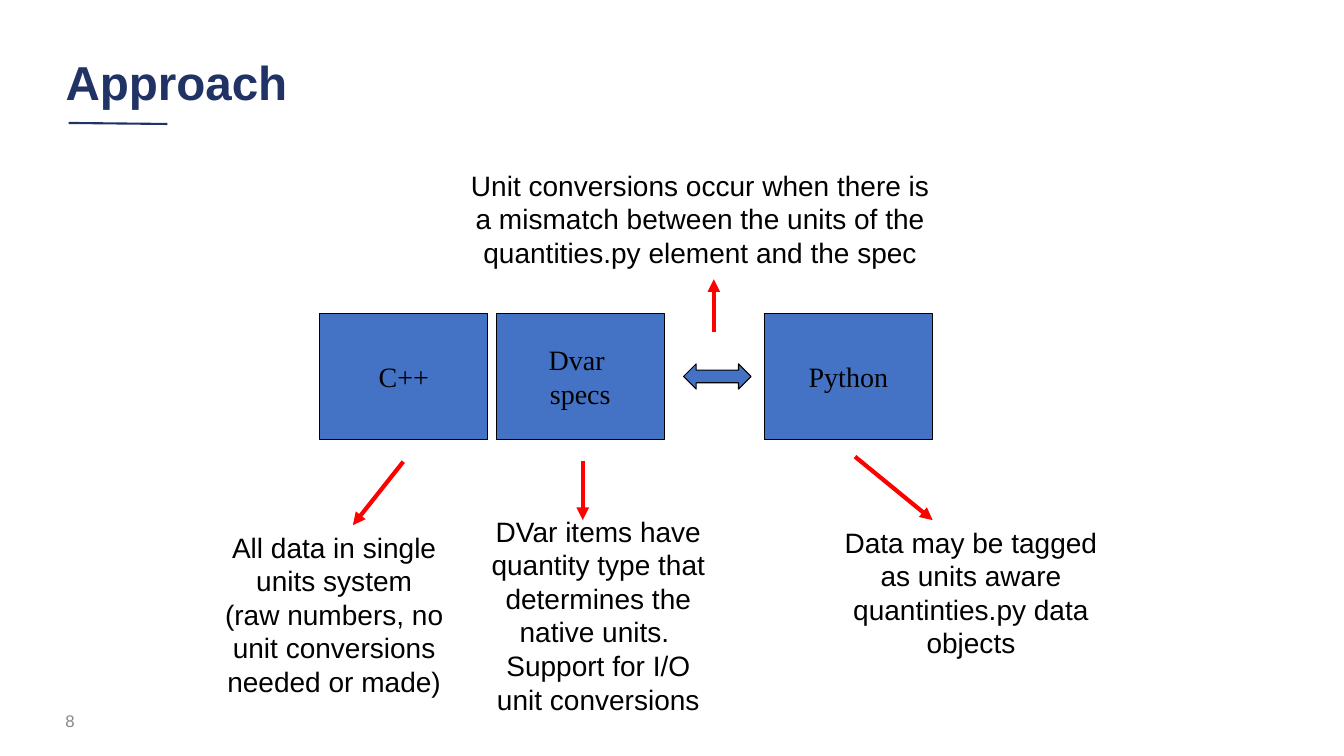
from lxml import etree
from pptx import Presentation
from pptx.dml.color import RGBColor
from pptx.enum.shapes import MSO_CONNECTOR, MSO_SHAPE
from pptx.enum.text import MSO_ANCHOR, PP_ALIGN
from pptx.oxml.ns import qn
from pptx.util import Inches, Pt

NAVY = RGBColor(0x21, 0x32, 0x65)
BLUE = RGBColor(0x44, 0x72, 0xC4)
RED = RGBColor(0xFF, 0, 0)
BLACK = RGBColor(0, 0, 0)
GREY = RGBColor(0x88, 0x88, 0x88)
STRAIGHT = MSO_CONNECTOR.STRAIGHT
RECT, DOUBLE_ARROW = MSO_SHAPE.RECTANGLE, MSO_SHAPE.LEFT_RIGHT_ARROW
MIDDLE, TOP = MSO_ANCHOR.MIDDLE, MSO_ANCHOR.TOP
CENTER, LEFT = PP_ALIGN.CENTER, PP_ALIGN.LEFT

BOX_TOP, BOX_W, BOX_H = 3.11, 1.67, 1.25
BOXES = [(3.17, ["C++"]), (4.92, ["Dvar ", "specs"]), (7.58, ["Python"])]
EXCHANGE = (6.78, 3.61, 0.67, 0.25)
NOTES = [  # left, top, width, height, paragraphs
    (2.08, 5.21, 2.47, 1.78, ["All data in single units system",
                              "(raw numbers, no unit conversions needed or made)"]),
    (8.17, 5.16, 2.92, 1.45, ["Data may be tagged as units aware quantinties.py data objects"]),
    (4.7, 5.05, 2.47, 2.12, ["DVar items have quantity type that determines the native units.  "
                             "Support for I/O unit conversions"]),
    (4.49, 1.62, 4.91, 1.11, ["Unit conversions occur when there is a mismatch between the "
                              "units of the quantities.py element and the spec"]),
]
ARROWS = [(4, 4.58, 3.5, 5.21), (5.78, 4.57, 5.78, 5.16),
          (8.48, 4.53, 9.25, 5.16), (7.08, 3.29, 7.08, 2.77)]
BODY = {"name": "Arial", "size": Pt(20)}
BOX_FONT = {"name": "Times New Roman", "size": Pt(20)}


def write(tf, lines, font, color=BLACK, align=CENTER, anchor=TOP, wrap=True):
    tf.word_wrap = wrap
    tf.vertical_anchor = anchor
    for i, line in enumerate(lines):
        p = tf.paragraphs[0] if i == 0 else tf.add_paragraph()
        p.alignment = align
        r = p.add_run()
        r.text = line
        for name, value in font.items():
            setattr(r.font, name, value)
        r.font.color.rgb = color


def add_text(slide, place, lines, font, **layout):
    box = slide.shapes.add_textbox(*map(Inches, place))
    write(box.text_frame, lines, font, **layout)


def add_block(slide, kind, place):
    """Add a blue shape with a thin black outline."""
    sp = slide.shapes.add_shape(kind, *map(Inches, place))
    sp.shadow.inherit = False
    sp.fill.solid()
    sp.fill.fore_color.rgb = BLUE
    sp.line.color.rgb = BLACK
    sp.line.width = Pt(0.75)
    return sp


def add_line(slide, ends, color, width, arrow=False):
    c = slide.shapes.add_connector(STRAIGHT, *map(Inches, ends))
    c.line.color.rgb = color
    c.line.width = Pt(width)
    if arrow:
        etree.SubElement(c.line._get_or_add_ln(), qn("a:tailEnd"), type="triangle")
    etree.SubElement(c._element.spPr, qn("a:effectLst"))


def main():
    prs = Presentation()
    prs.slide_width, prs.slide_height = Inches(13.33), Inches(7.5)
    slide = prs.slides.add_slide(prs.slide_layouts[5])

    title = slide.shapes.title
    title.left, title.top, title.width, title.height = map(Inches, (0.55, 0.46, 11.12, 0.76))
    write(title.text_frame, ["Approach"], {"name": "Arial", "size": Pt(34), "bold": True},
          color=NAVY, align=LEFT, anchor=MIDDLE)
    title.text_frame.paragraphs[0].line_spacing = 0.9
    add_line(slide, (0.68, 1.22, 1.66, 1.23), NAVY, 1.5)
    add_text(slide, (0.55, 6.95, 3, 0.4), ["8"], {"name": "Arial", "size": Pt(12)},
             color=GREY, align=LEFT, anchor=MIDDLE)

    for left, lines in BOXES:
        sp = add_block(slide, RECT, (left, BOX_TOP, BOX_W, BOX_H))
        write(sp.text_frame, lines, BOX_FONT, anchor=MIDDLE, wrap=False)
    add_block(slide, DOUBLE_ARROW, EXCHANGE)

    for *place, lines in NOTES:
        add_text(slide, place, lines, BODY)
    for ends in ARROWS:
        add_line(slide, ends, RED, 3, arrow=True)

    prs.save("out.pptx")


if __name__ == "__main__":
    main()
